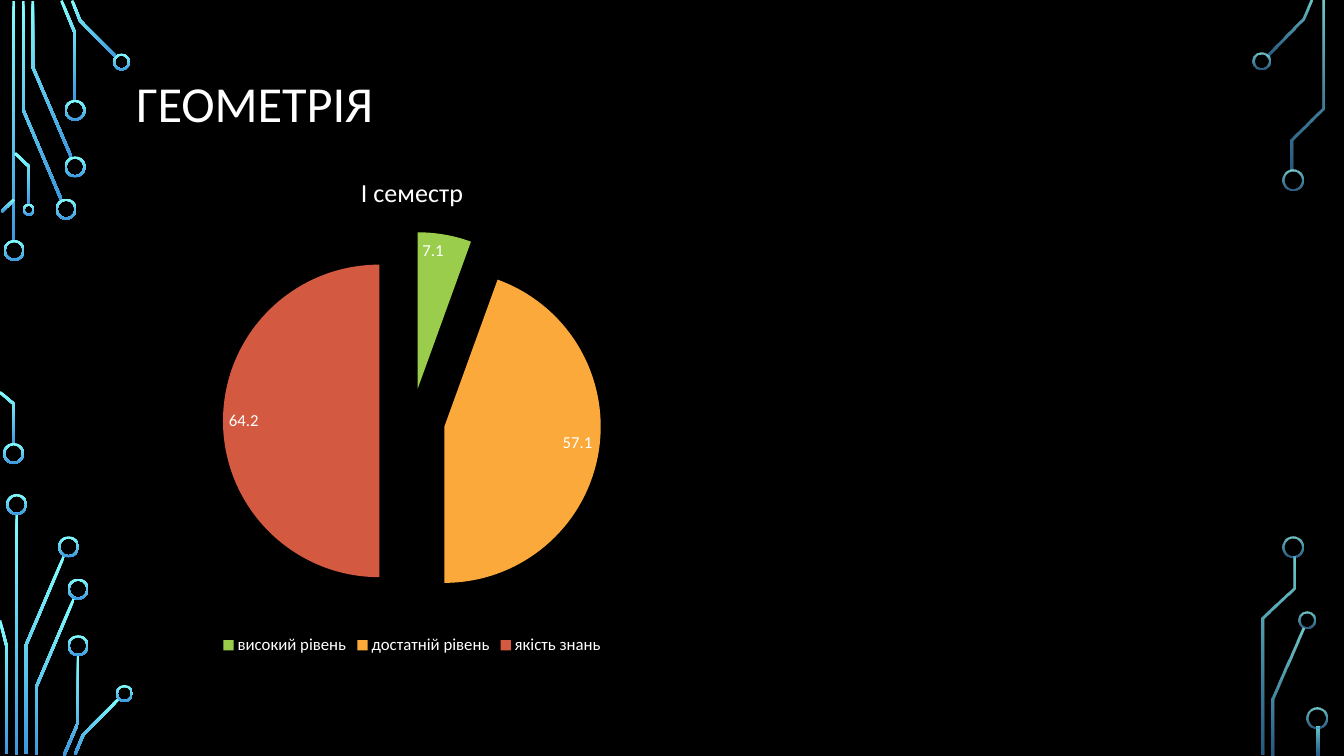
from math import hypot

from lxml.etree import SubElement
from pptx import Presentation
from pptx.chart.data import CategoryChartData
from pptx.dml.color import RGBColor
from pptx.enum.chart import XL_CHART_TYPE, XL_LABEL_POSITION, XL_LEGEND_POSITION
from pptx.enum.shapes import MSO_SHAPE
from pptx.enum.text import MSO_ANCHOR, PP_ALIGN
from pptx.oxml import parse_xml
from pptx.oxml.ns import nsdecls, qn
from pptx.util import Pt

FONT = "Calibri"
WHITE = "FFFFFF"
HALF = 0.95
RIM = 1.44
BIG, MID, TINY = 15, 12.2, 8.6

TOP_LEFT = {
    "wires": [
        [(9.7, 0.7), (9.7, 172.8)],
        [(16.6, 0.7), (16.6, 78.5), (43.9, 142.9)],
        [(23.4, 0.7), (23.4, 47.9), (51.1, 112.7)],
        [(43.9, 0.4), (53.6, 23.8), (53.6, 72)],
        [(51.5, 0.4), (57.2, 14.8), (83.2, 41)],
        [(1.1, 151.2), (10.1, 142.6)],
        [(0, 280.1), (10.1, 288.7), (10.1, 317.5)],
        [(10.8, 109.4), (20.9, 119.2), (20.9, 146.2)],
    ],
    "rings": [
        (10.1, 178.9, BIG), (9.7, 324, BIG), (47.2, 149.4, BIG), (53.6, 119.2, BIG),
        (53.6, 78.8, BIG), (86.8, 44.3, MID), (20.5, 149.8, TINY),
    ],
}
LOW_LEFT = {
    "wires": [
        [(11.9, 7.2), (11.9, 179.3)],
        [(45.7, 37.1), (18.4, 101.2), (18.4, 178.6)],
        [(0, 83.2), (4.7, 101.5), (4.7, 178.6)],
        [(52.9, 67.3), (25.6, 131.4), (25.6, 179.3)],
        [(55.8, 108), (55.8, 156.2), (45.7, 179.6)],
        [(85, 139), (59.4, 164.9), (53.6, 178.9)],
    ],
    "rings": [
        (11.9, 0.4, BIG), (49, 30.6, BIG), (55.8, 60.8, BIG),
        (55.8, 101.2, BIG), (88.9, 135.4, MID),
    ],
}
TOP_RIGHT = {
    "wires": [
        [(5, 40), (30.6, 14), (36.4, 0.4)],
        [(23, 121.7), (23, 99.7), (45, 77.4), (45, 0.7)],
    ],
    "rings": [(1.1, 43.6, MID), (23.4, 128.5, BIG)],
}
LOW_RIGHT = {
    "wires": [
        [(31, 88.9), (9, 139.3), (9, 179.3)],
        [(24.1, 37.4), (24.1, 60.1), (1.8, 81.7), (1.8, 179.3)],
        [(41.4, 159.1), (41.4, 179.3)],
    ],
    "rings": [(33.5, 83.2, MID), (23.8, 30.6, BIG), (40.7, 152.6, BIG)],
}


def tint(code):
    return RGBColor.from_string(code)


def style(font, size):
    font.name, font.size, font.bold = FONT, Pt(size), False
    font.color.rgb = tint(WHITE)


def glow(shape, alphas):
    shape.shadow.inherit = False
    shape.line.fill.background()
    shape.fill.gradient()
    shape.fill.gradient_angle = 270
    for stop, code, place in zip(shape.fill.gradient_stops, ("82FFFF", "3D97DE"), (0, 1)):
        stop.color.rgb = tint(code)
        stop.position = place
    if alphas:
        for color, alpha in zip(shape._element.iter(qn("a:srgbClr")), alphas):
            SubElement(color, qn("a:alpha")).set("val", str(alpha * 1000))


def ribbon(points):
    norms = []
    for (ax, ay), (bx, by) in zip(points, points[1:]):
        size = hypot(bx - ax, by - ay)
        norms.append(((ay - by) / size, (bx - ax) / size))
    left, right = [], []
    for (x, y), (ax, ay), (bx, by) in zip(points, norms[:1] + norms, norms + norms[-1:]):
        scale = HALF / (1 + ax * bx + ay * by)
        dx, dy = (ax + bx) * scale, (ay + by) * scale
        left.append((x + dx, y + dy))
        right.append((x - dx, y - dy))
    return left + right[::-1]


def circuit(slide, box, parts, alphas=None):
    left, top = box
    group = slide.shapes.add_group_shape()
    for wire in parts["wires"]:
        edge = [(Pt(left + x), Pt(top + y)) for x, y in ribbon(wire)]
        form = group.shapes.build_freeform(*edge[0])
        form.add_line_segments(edge[1:], close=True)
        glow(form.convert_to_shape(), alphas)
    for x, y, size in parts["rings"]:
        ring = group.shapes.add_shape(
            MSO_SHAPE.DONUT, Pt(left + x - size / 2), Pt(top + y - size / 2), Pt(size), Pt(size))
        ring.adjustments[0] = RIM / size
        glow(ring, alphas)


def heading(slide, box, text):
    title = slide.shapes.title
    title.left, title.top, title.width, title.height = map(Pt, box)
    frame = title.text_frame
    frame.vertical_anchor = MSO_ANCHOR.MIDDLE
    para = frame.paragraphs[0]
    para.alignment = PP_ALIGN.LEFT
    para.line_spacing = 0.9
    run = para.add_run()
    run.text = text
    style(run.font, 36)


def pie(slide, box, name, slices):
    data = CategoryChartData()
    data.categories = [label for label, _, _ in slices]
    data.add_series(name, [value for _, value, _ in slices])
    chart = slide.shapes.add_chart(XL_CHART_TYPE.PIE, *map(Pt, box), data).chart
    style(chart.font, 10)

    chart.has_title = True
    run = chart.chart_title.text_frame.paragraphs[0].add_run()
    run.text = name
    style(run.font, 18.6)
    chart.chart_title.include_in_layout = False

    chart.has_legend = True
    chart.legend.position = XL_LEGEND_POSITION.BOTTOM
    chart.legend.include_in_layout = False
    style(chart.legend.font, 12)

    plot = chart.plots[0]
    plot.vary_by_categories = True
    series = plot.series[0]
    for index, (_, _, code) in enumerate(slices):
        fill = series.points[index].format.fill
        fill.solid()
        fill.fore_color.rgb = tint(code)
    burst = parse_xml(f'<c:explosion {nsdecls("c")} val="21"/>')
    series._element.find(qn("c:tx")).addnext(burst)

    labels = series.data_labels
    labels.show_value = True
    labels.position = XL_LABEL_POSITION.INSIDE_END
    style(labels.font, 12)


def main():
    deck = Presentation()
    deck.slide_width, deck.slide_height = Pt(960), Pt(540)
    slide = deck.slides.add_slide(deck.slide_layouts[5])
    slide.background.fill.solid()
    slide.background.fill.fore_color.rgb = tint("000000")

    faint = (80, 60)
    circuit(slide, (0, 0), TOP_LEFT)
    circuit(slide, (0, 360), LOW_LEFT)
    circuit(slide, (900, 0), TOP_RIGHT, faint)
    circuit(slide, (900, 360), LOW_RIGHT, faint)
    heading(slide, (90, 17.3, 780, 116.6), "ГЕОМЕТРІЯ")
    pie(slide, (37.4, 110.2, 514, 360.7), "І семестр", [
        ("високий рівень", 7.1, "9ACD4C"),
        ("достатній рівень", 57.1, "FAA93A"),
        ("якість знань", 64.2, "D35940"),
    ])
    deck.save("out.pptx")


if __name__ == "__main__":
    main()
